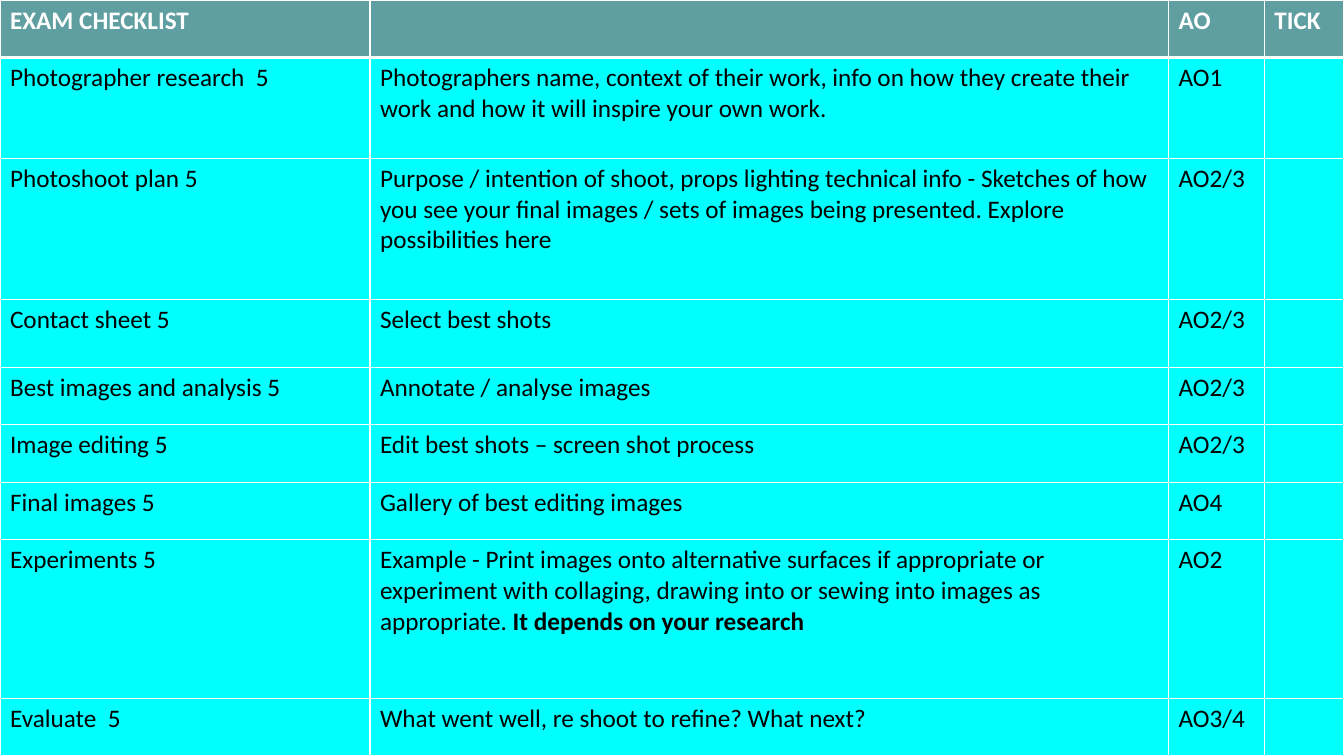
from dataclasses import dataclass

from lxml.etree import SubElement
from pptx import Presentation
from pptx.dml.color import RGBColor
from pptx.oxml.ns import qn
from pptx.util import Inches, Pt


@dataclass(frozen=True)
class Theme:
    font: str = "Calibri"
    size: int = 18
    header_fill: str = "5F9FA1"
    body_fill: str = "00FFFF"
    header_text: str = "FFFFFF"
    body_text: str = "000000"
    border: str = "FFFFFF"
    thin: int = 1
    thick: int = 3


class SlideBuilder:
    def __init__(self, prs, theme):
        self.theme = theme
        self.width, self.height = prs.slide_width, prs.slide_height
        self.s = prs.slides.add_slide(prs.slide_layouts[6])

    def table(self, rows, col_shares, row_shares):
        table = self.s.shapes.add_table(
            len(rows), len(col_shares), 0, 0, self.width, self.height
        ).table
        for col, share in zip(table.columns, col_shares):
            col.width = int(self.width * share / sum(col_shares))
        for row, share in zip(table.rows, row_shares):
            row.height = int(self.height * share / sum(row_shares))
        for i, row in enumerate(rows):
            for j, content in enumerate(row):
                cell = table.cell(i, j)
                self.borders(cell, i)
                self.cell(cell, content, header=i == 0)

    def cell(self, cell, content, header):
        t = self.theme
        cell.fill.solid()
        cell.fill.fore_color.rgb = RGBColor.from_string(
            t.header_fill if header else t.body_fill
        )
        p = cell.text_frame.paragraphs[0]
        p.font.name, p.font.size = t.font, Pt(t.size)
        p.font.color.rgb = RGBColor.from_string(
            t.header_text if header else t.body_text
        )
        plain, _, strong = content.partition("**")
        if plain:
            r = p.add_run()
            r.text = plain
            r.font.bold = header
        if strong:
            r = p.add_run()
            r.text = strong
            r.font.bold = True

    def borders(self, cell, row):
        t = self.theme
        widths = {
            "L": t.thin,
            "R": t.thin,
            "T": t.thick if row == 1 else t.thin,
            "B": t.thick if row == 0 else t.thin,
        }
        tcPr = cell._tc.get_or_add_tcPr()
        for side, width in widths.items():
            ln = SubElement(tcPr, qn(f"a:ln{side}"), w=str(Pt(width)))
            fill = SubElement(ln, qn("a:solidFill"))
            SubElement(fill, qn("a:srgbClr"), val=t.border)


CHECKLIST = [
    ("EXAM CHECKLIST", "", "AO", "TICK"),
    ("Photographer research  5",
     "Photographers name, context of their work, info on how they create their "
     "work and how it will inspire your own work.", "AO1", ""),
    ("Photoshoot plan 5",
     "Purpose / intention of shoot, props lighting technical info - Sketches of "
     "how you see your final images / sets of images being presented. Explore "
     "possibilities here", "AO2/3", ""),
    ("Contact sheet 5", "Select best shots", "AO2/3", ""),
    ("Best images and analysis 5", "Annotate / analyse images", "AO2/3", ""),
    ("Image editing 5", "Edit best shots – screen shot process", "AO2/3", ""),
    ("Final images 5", "Gallery of best editing images", "AO4", ""),
    ("Experiments 5",
     "Example - Print images onto alternative surfaces if appropriate or "
     "experiment with collaging, drawing into or sewing into images as "
     "appropriate. **It depends on your research", "AO2", ""),
    ("Evaluate  5", "What went well, re shoot to refine? What next?", "AO3/4", ""),
]
COL_SHARES = [3.67, 7.92, 0.95, 0.79]
ROW_SHARES = [0.57, 1, 1.4, 0.67, 0.57, 0.57, 0.57, 1.57, 0.57]


def main():
    prs = Presentation()
    prs.slide_width, prs.slide_height = Inches(13.33), Inches(7.5)
    SlideBuilder(prs, Theme()).table(CHECKLIST, COL_SHARES, ROW_SHARES)
    prs.save("out.pptx")


if __name__ == "__main__":
    main()
